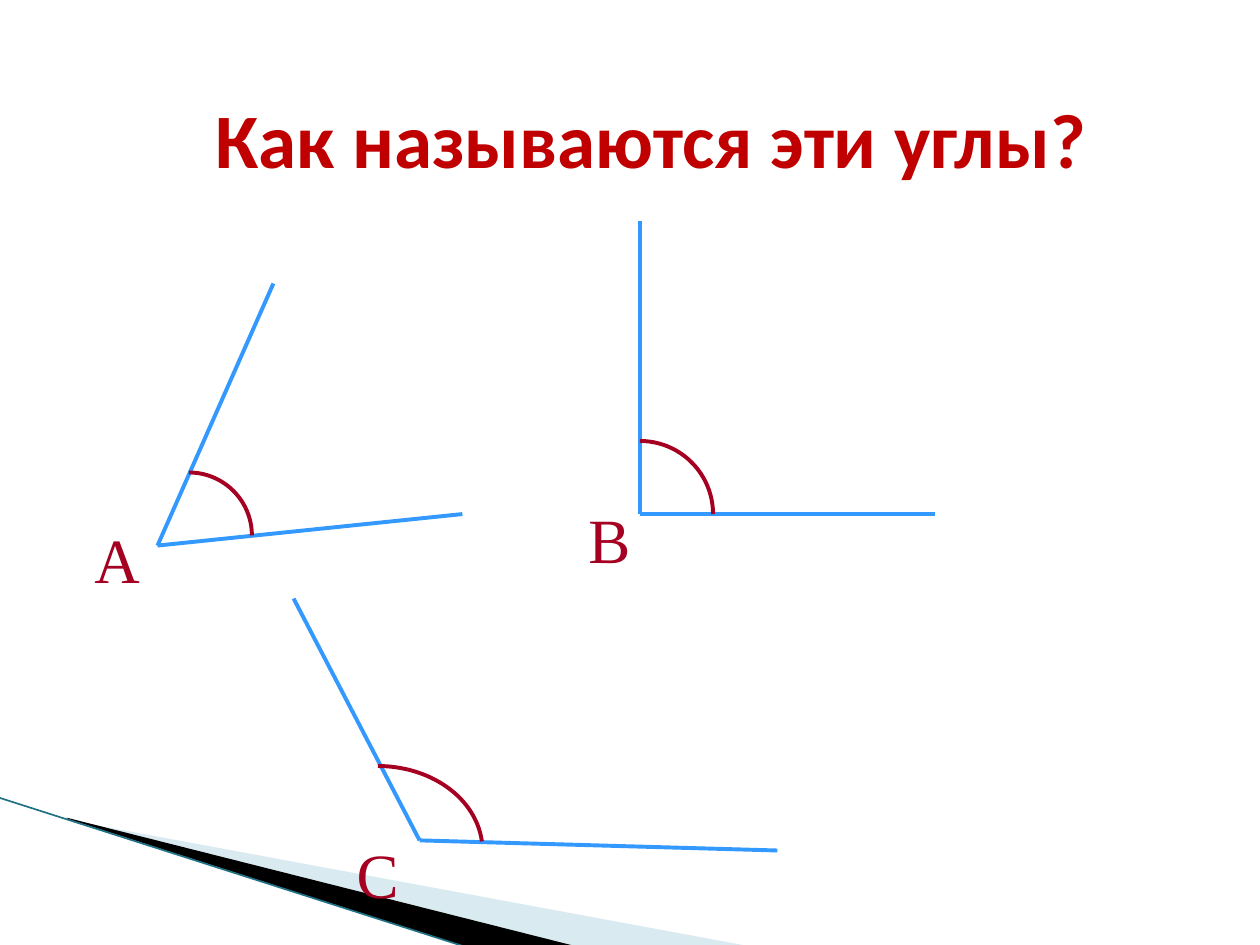
from dataclasses import dataclass

from lxml import etree
from pptx import Presentation
from pptx.dml.color import RGBColor
from pptx.enum.shapes import MSO_CONNECTOR, MSO_SHAPE
from pptx.enum.text import MSO_ANCHOR, MSO_AUTO_SIZE, PP_ALIGN
from pptx.oxml.ns import qn
from pptx.util import Inches, Pt

STRAIGHT = MSO_CONNECTOR.STRAIGHT
ARC = MSO_SHAPE.ARC
CENTER = PP_ALIGN.CENTER
MIDDLE, TOP = MSO_ANCHOR.MIDDLE, MSO_ANCHOR.TOP
NO_FIT = MSO_AUTO_SIZE.NONE
TITLE_ONLY = 5


@dataclass(frozen=True)
class Theme:
    """Colours, fonts and sizes of the slide."""
    title: str = "C00000"
    ray: str = "3399FF"
    mark: str = "A50021"
    pale: str = "A0CBDC"
    dark: str = "000000"
    edge: str = "1F7285"
    title_font: str = "Calibri"
    label_font: str = "Times New Roman"
    title_size: int = 44
    label_size: int = 36
    stroke: float = 2.25
    thin: float = 0.95


THEME = Theme()

ANGLES = [
    {"name": "А", "vertex": (1.25, 4.33), "ends": [(2.17, 2.25), (3.67, 4.08)],
     "center": (1.5, 4.25), "radii": (0.5, 0.5), "label": (0.75, 4.08, 0.33, 0.42)},
    {"name": "В", "vertex": (5.08, 4.08), "ends": [(5.08, 1.75), (7.42, 4.08)],
     "center": (5.08, 4.08), "radii": (0.58, 0.58), "label": (4.67, 3.92, 0.33, 0.33)},
    {"name": "С", "vertex": (3.33, 6.67), "ends": [(2.33, 4.75), (6.17, 6.75)],
     "center": (3, 6.75), "radii": (0.83, 0.67), "label": (2.83, 6.58, 0.33, 0.33),
     "end_degrees": 355},
]


def set_attrs(obj, values):
    """Set each named attribute of obj."""
    for name, value in values.items():
        setattr(obj, name, value)


def set_line(shape, color, width):
    """Give a shape or connector a solid line."""
    shape.line.color.rgb = RGBColor.from_string(color)
    shape.line.width = Pt(width)


def write_text(tf, text, color, frame, font):
    """Write one centred paragraph into a text frame."""
    set_attrs(tf, frame)
    p = tf.paragraphs[0]
    p.alignment = CENTER
    r = p.add_run()
    r.text = text
    set_attrs(r.font, font)
    r.font.color.rgb = RGBColor.from_string(color)


def add_line(s, start, end, color, width):
    """Draw a straight line between two points."""
    line = s.shapes.add_connector(STRAIGHT, *map(Inches, (*start, *end)))
    set_line(line, color, width)
    etree.SubElement(line._element.spPr, qn("a:effectLst"))


def add_wedge(s, points, color, opacity=100):
    """Draw a filled polygon with no outline."""
    first, *rest = [(Inches(x), Inches(y)) for x, y in points]
    builder = s.shapes.build_freeform(*first)
    builder.add_line_segments(rest, close=True)
    sp = builder.convert_to_shape()
    sp.shadow.inherit = False
    sp.fill.solid()
    sp.fill.fore_color.rgb = RGBColor.from_string(color)
    sp.line.fill.background()
    if opacity < 100:
        clr = sp._element.spPr.find(".//" + qn("a:srgbClr"))
        etree.SubElement(clr, qn("a:alpha"), val=str(opacity * 1000))


def add_arc(s, center, radii, end_degrees=0):
    """Draw an arc from the top of an ellipse to the given angle."""
    (x, y), (rx, ry) = center, radii
    sp = s.shapes.add_shape(ARC, *map(Inches, (x - rx, y - ry, 2 * rx, 2 * ry)))
    sp.shadow.inherit = False
    sp.fill.background()
    sp.adjustments[1] = end_degrees * 0.6
    set_line(sp, THEME.mark, THEME.stroke)


def add_label(s, text, box):
    """Name an angle with a letter."""
    tb = s.shapes.add_textbox(*map(Inches, box))
    write_text(tb.text_frame, text, THEME.mark,
               {"word_wrap": False, "vertical_anchor": TOP, "margin_top": Inches(0.05),
                "margin_left": 0, "margin_right": 0},
               {"name": THEME.label_font, "size": Pt(THEME.label_size)})


def add_title(s, text):
    """Fill and place the title placeholder."""
    sp = s.shapes.title
    set_attrs(sp, {"left": Inches(0.67), "top": Inches(0.47),
                   "width": Inches(9), "height": Inches(1.25)})
    write_text(sp.text_frame, text, THEME.title,
               {"auto_size": NO_FIT, "word_wrap": True, "vertical_anchor": MIDDLE},
               {"name": THEME.title_font, "size": Pt(THEME.title_size), "bold": True})


def add_swoosh(s):
    """Draw the corner decoration."""
    add_wedge(s, [(0.55, 6.51), (5.95, 7.51), (4.56, 7.51), (0.55, 6.5)], THEME.pale, 40)
    add_wedge(s, [(0.53, 6.49), (4.57, 7.51), (3.72, 7.52), (0.54, 6.5)], THEME.dark)
    add_line(s, (-0.01, 6.33), (3.71, 7.52), THEME.edge, THEME.thin)


def add_angle(s, angle):
    """Draw an angle with its rays, arc and letter."""
    for end in angle["ends"]:
        add_line(s, angle["vertex"], end, THEME.ray, THEME.stroke)
    add_arc(s, angle["center"], angle["radii"], angle.get("end_degrees", 0))
    add_label(s, angle["name"], angle["label"])


def main():
    """Build and save the slide."""
    prs = Presentation()
    set_attrs(prs, {"slide_width": Inches(10), "slide_height": Inches(7.5)})
    s = prs.slides.add_slide(prs.slide_layouts[TITLE_ONLY])
    add_swoosh(s)
    add_title(s, "Как называются эти углы?")
    for angle in ANGLES:
        add_angle(s, angle)
    prs.save("out.pptx")


if __name__ == "__main__":
    main()
